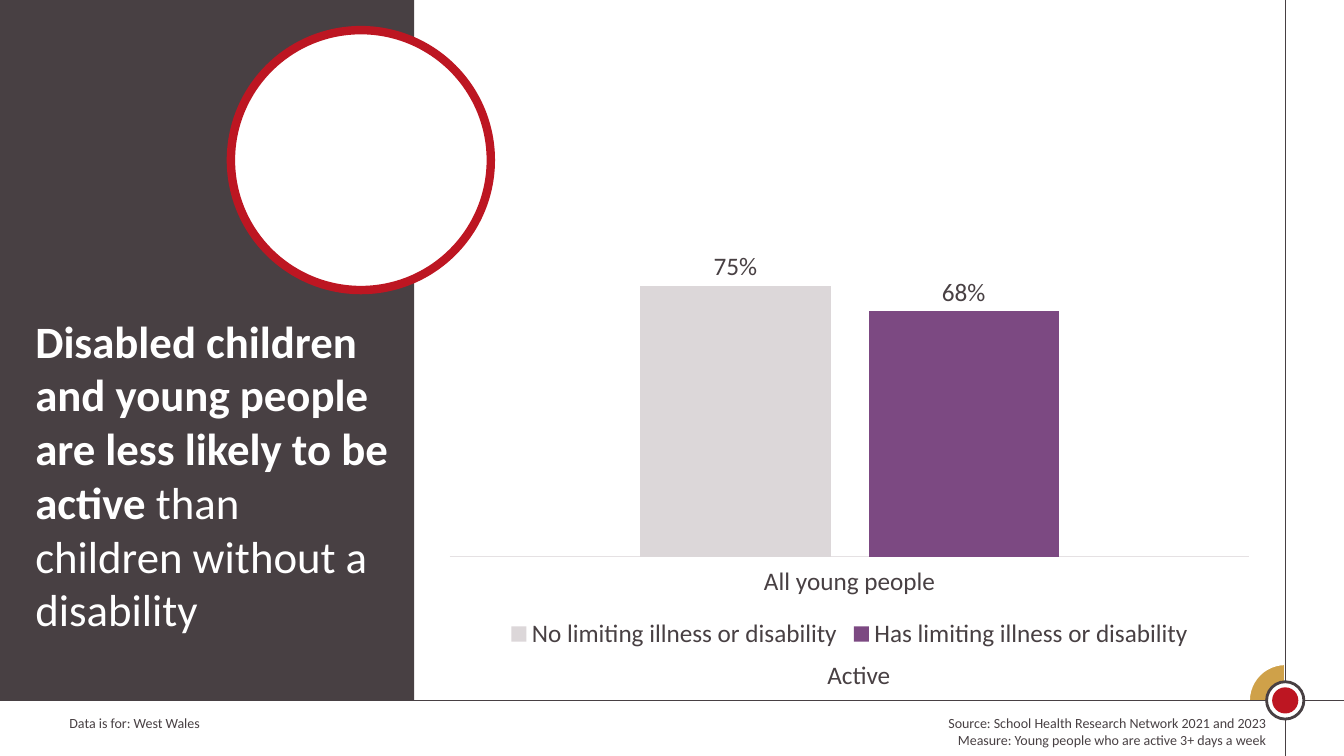
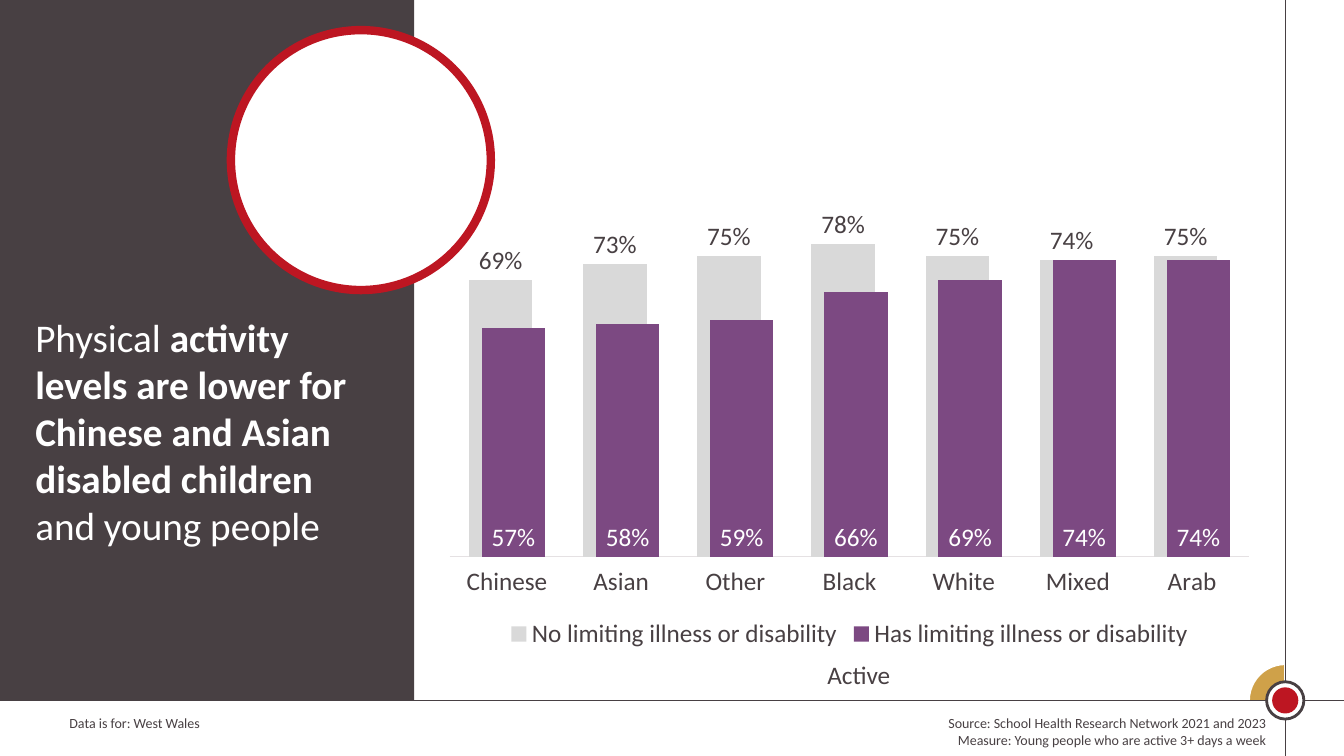
from lxml.etree import SubElement
from pptx import Presentation
from pptx.chart.data import CategoryChartData
from pptx.dml.color import RGBColor
from pptx.enum.chart import XL_CHART_TYPE as ChartType
from pptx.enum.chart import XL_LABEL_POSITION as LabelPosition
from pptx.enum.chart import XL_LEGEND_POSITION as LegendPosition
from pptx.enum.chart import XL_TICK_LABEL_POSITION as TickLabels
from pptx.enum.chart import XL_TICK_MARK as TickMark
from pptx.enum.shapes import MSO_CONNECTOR as Connector
from pptx.enum.shapes import MSO_SHAPE as Shape
from pptx.enum.text import MSO_AUTO_SIZE as AutoSize
from pptx.enum.text import PP_ALIGN as Align
from pptx.oxml.ns import qn
from pptx.util import Cm, Pt

FONT = "Calibri"
DARK, WHITE, RED, GOLD = "484043", "FFFFFF", "BD1622", "CFA149"
PURPLE, AXIS_GREY = "7C4982", "E5E1E3"

SLIDE_W, SLIDE_H = 33.87, 19.05
RULE_X, RULE_Y = 32.39, 17.65
PANEL_W = 10.44
BADGE_LEFT, BADGE_TOP, BADGE_SIZE = 5.82, 0.76, 6.55
CHART_BOX = (10.92, 4.7, 20.98, 11.79)

REGION = ["Data is for: West Wales"]
SOURCE = [
    "Source: School Health Research Network 2021 and 2023",
    "Measure: Young people who are active 3+ days a week",
]
SERIES_NAMES = ("No limiting illness or disability", "Has limiting illness or disability")

PAGES = [
    {
        "heading": [
            ("Disabled children and young people are less likely to be active ", True),
            ("than children without a disability", False),
        ],
        "heading_size": 32,
        "heading_box": (0.64, 7.77, 9.42, 9.83),
        "categories": ["All young people"],
        "values": [(0.75,), (0.68,)],
        "colours": ("DCD7D9", PURPLE),
        "labels": [(LabelPosition.OUTSIDE_END, DARK), (LabelPosition.OUTSIDE_END, DARK)],
        "gap": 200, "overlap": -20, "maximum": 1,
    },
    {
        "heading": [
            ("Physical ", False),
            ("activity levels are lower for Chinese and Asian disabled children ", True),
            ("and young people", False),
        ],
        "heading_size": 28,
        "heading_box": (0.64, 7.77, 8.71, 7.44),
        "categories": ["Chinese", "Asian", "Other", "Black", "White", "Mixed", "Arab"],
        "values": [
            (0.69, 0.73, 0.75, 0.78, 0.75, 0.74, 0.75),
            (0.57, 0.58, 0.59, 0.66, 0.69, 0.74, 0.74),
        ],
        "colours": ("D9D9D9", PURPLE),
        "labels": [(LabelPosition.OUTSIDE_END, DARK), (LabelPosition.INSIDE_BASE, WHITE)],
        "gap": 60, "overlap": 80, "maximum": 0.9,
    },
]


def colour(value):
    return RGBColor.from_string(value)


def paint(fill, value):
    fill.solid()
    fill.fore_color.rgb = colour(value)


def style_font(font, size, value=DARK, bold=False):
    font.name = FONT
    font.size = Pt(size)
    font.bold = bold
    font.color.rgb = colour(value)


def add_shape(page, kind, box, fill, line=None, width=0):
    shape = page.shapes.add_shape(kind, *map(Cm, box))
    shape.shadow.inherit = False
    paint(shape.fill, fill)
    if line:
        shape.line.color.rgb = colour(line)
        shape.line.width = Pt(width)
    else:
        shape.line.fill.background()
    return shape


def add_at_crossing(page, kind, size, *style):
    box = (RULE_X - size / 2, RULE_Y - size / 2, size, size)
    return add_shape(page, kind, box, *style)


def add_rule(page, *ends):
    rule = page.shapes.add_connector(Connector.STRAIGHT, *map(Cm, ends))
    rule.line.color.rgb = colour(DARK)
    rule.line.width = Pt(1)
    SubElement(rule.element.spPr, qn("a:effectLst"))


def add_text(page, box, paragraphs, size, value=DARK, align=Align.LEFT):
    frame = page.shapes.add_textbox(*map(Cm, box)).text_frame
    frame.word_wrap = True
    frame.auto_size = AutoSize.SHAPE_TO_FIT_TEXT
    for index, spans in enumerate(paragraphs):
        para = frame.add_paragraph() if index else frame.paragraphs[0]
        para.alignment = align
        for text, bold in spans:
            span = para.add_run()
            span.text = text
            style_font(span.font, size, value, bold)


def plain(lines):
    return [[(line, False)] for line in lines]


def add_frame(page):
    add_text(page, (1.5, 17.88, 11.15, 0.69), plain(REGION), 10)
    quarter = add_at_crossing(page, Shape.PIE, 1.83, GOLD, WHITE, 1.5)
    quarter.adjustments[0] = 106.62
    quarter.adjustments[1] = 162
    add_rule(page, RULE_X, 0, RULE_X, SLIDE_H)
    add_rule(page, 0, RULE_Y, SLIDE_W, RULE_Y)
    add_at_crossing(page, Shape.OVAL, 0.94, WHITE, DARK, 2)
    add_at_crossing(page, Shape.OVAL, 0.66, RED)
    add_shape(page, Shape.RECTANGLE, (0, 0, PANEL_W, RULE_Y), DARK)
    badge = (BADGE_LEFT, BADGE_TOP, BADGE_SIZE, BADGE_SIZE)
    add_shape(page, Shape.OVAL, badge, WHITE, RED, 6)
    add_text(page, (15.72, 17.88, 16.43, 1.12), plain(SOURCE), 10, align=Align.RIGHT)


def add_activity_chart(page, content):
    data = CategoryChartData(number_format="0%")
    data.categories = content["categories"]
    for name, values in zip(SERIES_NAMES, content["values"]):
        data.add_series(name, values)
    chart = page.shapes.add_chart(
        ChartType.COLUMN_CLUSTERED, *map(Cm, CHART_BOX), data
    ).chart
    style_font(chart.font, 18)
    chart.has_title = False
    chart.has_legend = True
    chart.legend.position = LegendPosition.BOTTOM
    chart.legend.include_in_layout = False
    style_font(chart.legend.font, 18)

    names = chart.category_axis
    names.major_tick_mark = names.minor_tick_mark = TickMark.NONE
    names.tick_label_position = TickLabels.LOW
    names.format.line.color.rgb = colour(AXIS_GREY)
    names.format.line.width = Pt(0.75)
    style_font(names.tick_labels.font, 18)

    scale = chart.value_axis
    scale.visible = False
    scale.has_major_gridlines = False
    scale.minimum_scale = 0
    scale.maximum_scale = content["maximum"]

    plot = chart.plots[0]
    plot.vary_by_categories = False
    plot.gap_width = content["gap"]
    plot.overlap = content["overlap"]
    for series, fill, (position, ink) in zip(
        plot.series, content["colours"], content["labels"]
    ):
        paint(series.format.fill, fill)
        labels = series.data_labels
        labels.show_value = True
        labels.number_format = "0%"
        labels.number_format_is_linked = False
        labels.position = position
        style_font(labels.font, 18, ink)


def main():
    deck = Presentation()
    deck.slide_width, deck.slide_height = Cm(SLIDE_W), Cm(SLIDE_H)
    for content in PAGES:
        page = deck.slides.add_slide(deck.slide_layouts[6])
        add_frame(page)
        add_text(
            page, content["heading_box"], [content["heading"]],
            content["heading_size"], WHITE,
        )
        add_text(page, (20.6, 16.48, 3.1, 1.02), plain(["Active"]), 18)
        add_activity_chart(page, content)
    deck.save("out.pptx")


if __name__ == "__main__":
    main()
